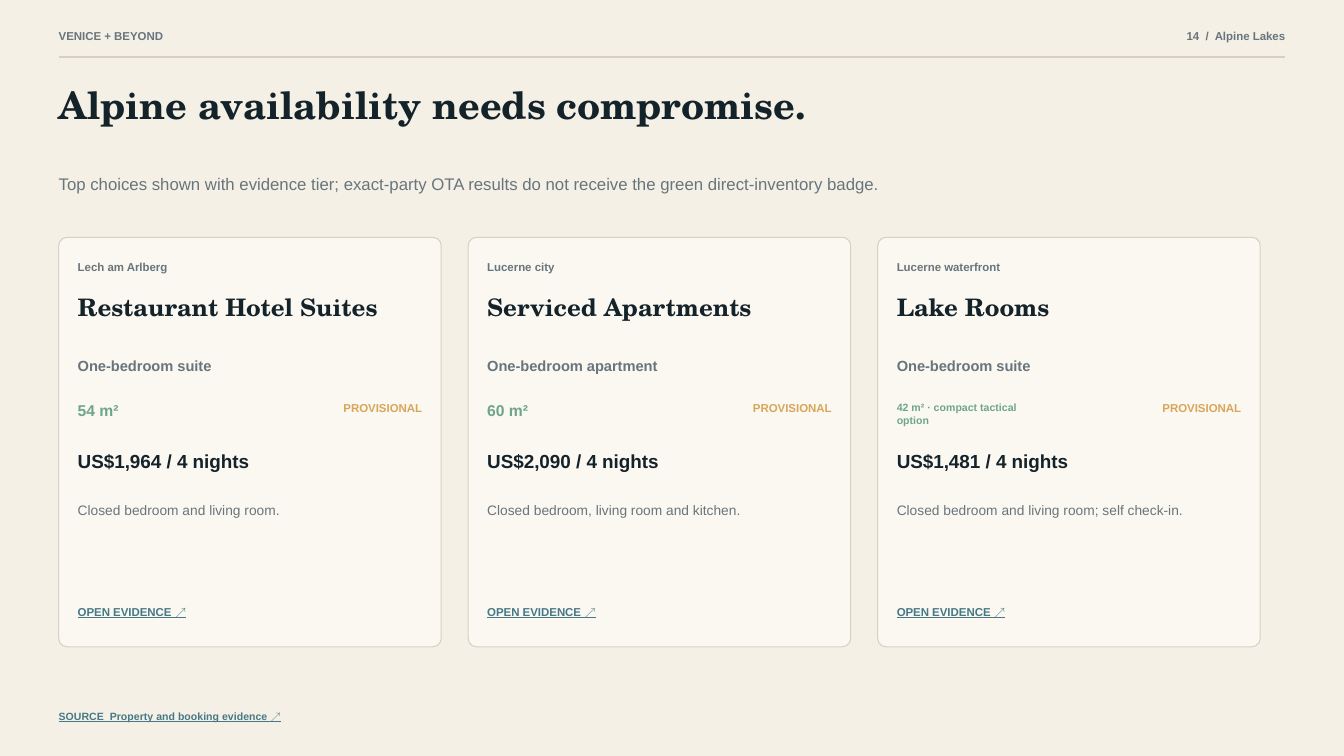
from dataclasses import dataclass

import lxml.etree
import pptx
import pptx.dml.color
import pptx.enum.shapes
import pptx.enum.text
import pptx.oxml.ns
import pptx.shapes.autoshape
import pptx.shapes.base
import pptx.slide
import pptx.util

Cm = pptx.util.Cm
Align = pptx.enum.text.PP_ALIGN


@dataclass(frozen=True)
class Style:
    size: float
    color: str
    bold: bool = True
    line: bool = False
    font: str = "Arial"


@dataclass(frozen=True)
class Theme:
    """Colours and type styles of the slide."""
    paper: str = "F4F0E6"
    panel: str = "FBF8F1"
    edge: str = "D7D1C4"
    title: Style = Style(27, "14222A", font="TeX Gyre Schola")
    lead: Style = Style(12, "68757C", bold=False)
    label: Style = Style(8.2, "68757C")
    name: Style = Style(17.2, "14222A", font="TeX Gyre Schola")
    room: Style = Style(10.5, "68757C")
    area: Style = Style(11.2, "6EA58A")
    small: Style = Style(7.5, "6EA58A")
    badge: Style = Style(8.2, "D8A65B")
    price: Style = Style(13.5, "14222A")
    note: Style = Style(9.8, "68757C", bold=False)
    link: Style = Style(8.2, "467886", line=True)
    source: Style = Style(7.5, "467886", line=True)


@dataclass(frozen=True)
class Box:
    left: float
    top: float
    width: float
    height: float


@dataclass(frozen=True)
class Stay:
    place: str
    name: str
    room: str
    area: str
    price: str
    note: str
    tight: bool = False


THEME = Theme()
LEFT, WIDTH = 1.48, 30.91
TOP, WIDE, HIGH = 5.98, 9.64, 10.32
PITCH, PAD = 10.32, 0.48

STAYS = [
    Stay("Lech am Arlberg", "Restaurant Hotel Suites", "One-bedroom suite", "54 m²",
         "US$1,964 / 4 nights", "Closed bedroom and living room."),
    Stay("Lucerne city", "Serviced Apartments", "One-bedroom apartment", "60 m²",
         "US$2,090 / 4 nights", "Closed bedroom, living room and kitchen."),
    Stay("Lucerne waterfront", "Lake Rooms", "One-bedroom suite",
         "42 m² · compact tactical option", "US$1,481 / 4 nights",
         "Closed bedroom and living room; self check-in.", tight=True),
]


def paint(code: str) -> pptx.dml.color.RGBColor:
    return pptx.dml.color.RGBColor.from_string(code)


def place(shape: pptx.shapes.base.BaseShape, box: Box) -> None:
    shape.left, shape.top = Cm(box.left), Cm(box.top)
    shape.width, shape.height = Cm(box.width), Cm(box.height)


def fill_text(shape: pptx.shapes.autoshape.Shape, text: str, style: Style,
              align: Align = Align.LEFT) -> None:
    frame = shape.text_frame
    frame.word_wrap = True
    frame.auto_size = pptx.enum.text.MSO_AUTO_SIZE.NONE
    frame.vertical_anchor = pptx.enum.text.MSO_ANCHOR.TOP
    frame.margin_left = frame.margin_right = 0
    frame.margin_top = frame.margin_bottom = 0
    para = frame.paragraphs[0]
    para.alignment = align
    run = para.add_run()
    run.text = text
    font = run.font
    font.name, font.size = style.font, pptx.util.Pt(style.size)
    font.bold, font.underline = style.bold, style.line
    font.color.rgb = paint(style.color)


def add_text(slide: pptx.slide.Slide, box: Box, text: str, style: Style,
             align: Align = Align.LEFT) -> None:
    shape = slide.shapes.add_textbox(0, 0, 0, 0)
    place(shape, box)
    fill_text(shape, text, style, align)


def add_rule(slide: pptx.slide.Slide, top: float) -> None:
    rule = slide.shapes.add_connector(
        pptx.enum.shapes.MSO_CONNECTOR.STRAIGHT,
        Cm(LEFT), Cm(top), Cm(LEFT + WIDTH), Cm(top))
    rule.line.color.rgb = paint(THEME.edge)
    rule.line.width = pptx.util.Pt(1.5)
    props = rule.element.find(pptx.oxml.ns.qn("p:spPr"))
    lxml.etree.SubElement(props, pptx.oxml.ns.qn("a:effectLst"))


def add_card(slide: pptx.slide.Slide, left: float, stay: Stay) -> None:
    card = slide.shapes.add_shape(
        pptx.enum.shapes.MSO_SHAPE.ROUNDED_RECTANGLE, 0, 0, 0, 0)
    place(card, Box(left, TOP, WIDE, HIGH))
    card.adjustments[0] = 0.022
    card.shadow.inherit = False
    card.fill.solid()
    card.fill.fore_color.rgb = paint(THEME.panel)
    card.line.color.rgb = paint(THEME.edge)
    card.line.width = pptx.util.Pt(0.75)

    start, span = left + PAD, WIDE - 2 * PAD
    rows = [
        (6.56, span, 0.48, stay.place, THEME.label),
        (7.36, span, 1.38, stay.name, THEME.name),
        (9.0, span, 0.9, stay.room, THEME.room),
        (10.11, 3.18, 0.64, stay.area, THEME.small if stay.tight else THEME.area),
        (11.32, span, 1.01, stay.price, THEME.price),
        (12.65, span, 1.38, stay.note, THEME.note),
        (15.24, 4.76, 0.48, "OPEN EVIDENCE ↗", THEME.link),
    ]
    for top, width, height, text, style in rows:
        add_text(slide, Box(start, top, width, height), text, style)
    add_text(slide, Box(start + span - 4.13, 10.11, 4.13, 0.58),
             "PROVISIONAL", THEME.badge, Align.RIGHT)


def main() -> None:
    deck = pptx.Presentation()
    deck.slide_width, deck.slide_height = Cm(33.87), Cm(19.05)
    slide = deck.slides.add_slide(deck.slide_layouts.get_by_name("Title Only"))
    slide.background.fill.solid()
    slide.background.fill.fore_color.rgb = paint(THEME.paper)

    add_text(slide, Box(LEFT, 0.74, 8.47, 0.48), "VENICE + BEYOND", THEME.label)
    add_text(slide, Box(LEFT + WIDTH - 8.36, 0.74, 8.36, 0.48),
             "14  /  Alpine Lakes", THEME.label, Align.RIGHT)
    add_rule(slide, 1.44)

    title = slide.shapes.title
    place(title, Box(LEFT, 2.06, 26.99, 2.17))
    fill_text(title, "Alpine availability needs compromise.", THEME.title)
    add_text(slide, Box(LEFT, 4.39, 28.58, 0.9),
             "Top choices shown with evidence tier; exact-party OTA results "
             "do not receive the green direct-inventory badge.", THEME.lead)

    for index, stay in enumerate(STAYS):
        add_card(slide, LEFT + index * PITCH, stay)
    add_text(slide, Box(LEFT, 17.89, 12.7, 0.48),
             "SOURCE  Property and booking evidence ↗", THEME.source)
    deck.save("out.pptx")


if __name__ == "__main__":
    main()
